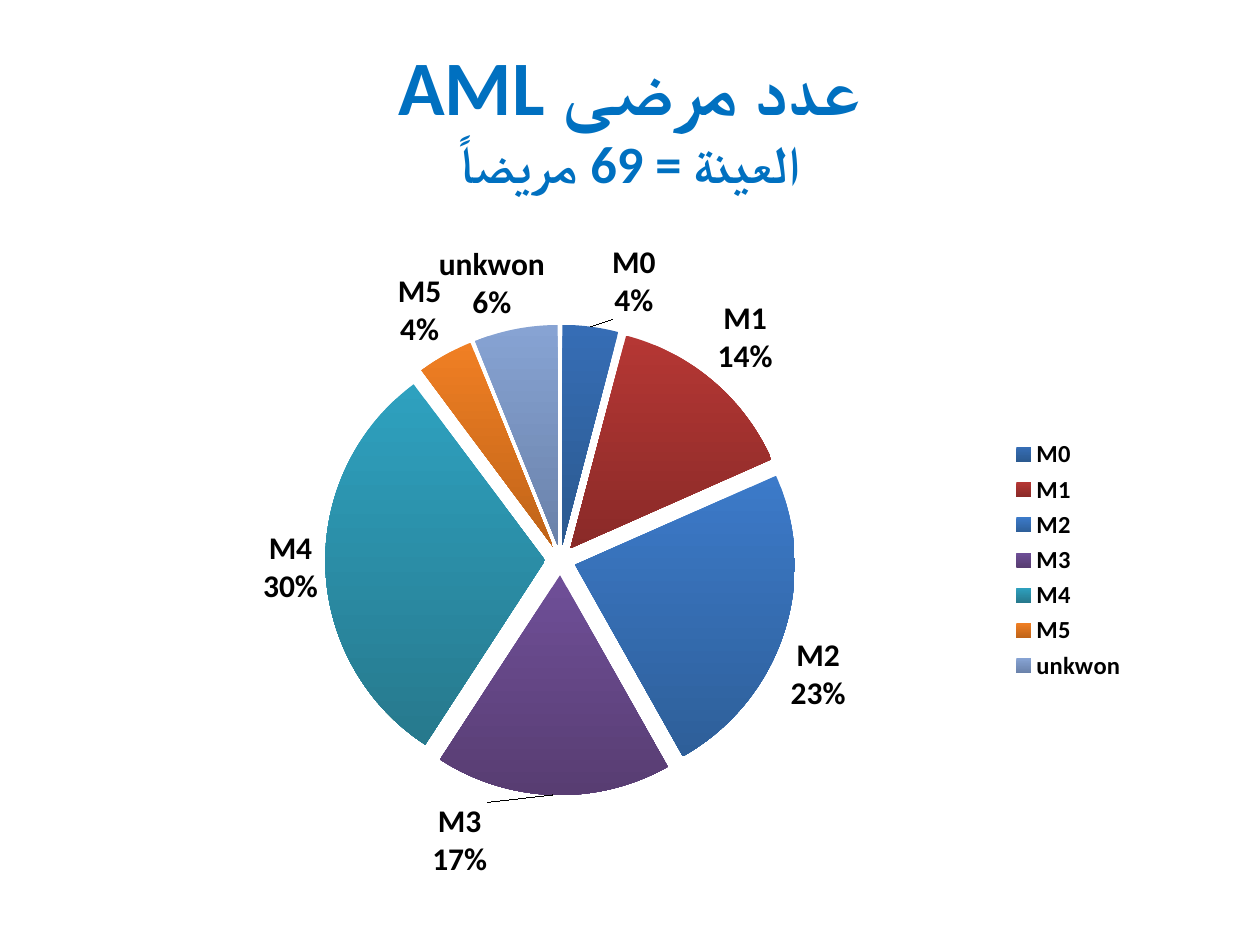
import pptx
import pptx.chart.data
import pptx.dml.color
import pptx.enum.chart
import pptx.enum.text
import pptx.oxml
import pptx.oxml.ns
import pptx.util
from dataclasses import dataclass

PX = 914400 / 126


@dataclass(frozen=True)
class Theme:
    font: str = "Calibri"
    title: str = "0070C0"
    text: str = "000000"
    title_size: int = 44
    subtitle_size: int = 30
    label_size: int = 18
    legend_size: int = 14


THEME = Theme()

TITLE_LINES = ("عدد مرضى AML", "العينة = 69 مريضاً")

# category, percent, top colour, bottom colour
SLICES = (
    ("M0", 4, "366DB5", "2B5A90"),
    ("M1", 14, "B53734", "8A2A28"),
    ("M2", 23, "3C7AC9", "2E5F99"),
    ("M3", 17, "6F4F98", "583D72"),
    ("M4", 30, "2EA1BF", "27798D"),
    ("M5", 4, "F07F24", "C06418"),
    ("unkwon", 6, "87A3D3", "6A82AA"),
)
# label shifts as fractions of the chart size
LABEL_SHIFTS = {0: (0.02, 0), 3: (-0.09, 0), 6: (0.03, 0)}
# the percentages add up to 98, so this share would be rounded up
FIXED_LABEL = 4
EXPLOSION = 7
PLOT_AREA = (0.21, 0.15, 0.46, 0.7)


def px(n):
    return pptx.util.Emu(round(n * PX))


def rgb(value):
    return pptx.dml.color.RGBColor.from_string(value)


def set_font(font, size, color):
    font.name = THEME.font
    font.size = pptx.util.Pt(size)
    font.bold = True
    font.color.rgb = rgb(color)


def set_arabic_font(r):
    """Name the font of complex scripts, which font.name leaves alone."""
    cs = pptx.oxml.parse_xml(
        f'<a:cs {pptx.oxml.ns.nsdecls("a")} typeface="{THEME.font}"/>')
    r._r.get_or_add_rPr().append(cs)


def chart_xml(tag, content="", **attrs):
    attributes = "".join(f' {k}="{v}"' for k, v in attrs.items())
    return pptx.oxml.parse_xml(
        f'<c:{tag} {pptx.oxml.ns.nsdecls("c")}{attributes}>{content}</c:{tag}>')


def manual_layout(**values):
    items = "".join(f'<c:{k} val="{v}"/>' for k, v in values.items())
    return chart_xml("layout", f"<c:manualLayout>{items}</c:manualLayout>")


def add_title(s):
    title = s.shapes.title
    title.left, title.top, title.width, title.height = map(px, (63, 38, 1134, 157))
    tf = title.text_frame
    tf.auto_size = pptx.enum.text.MSO_AUTO_SIZE.NONE
    tf.vertical_anchor = pptx.enum.text.MSO_ANCHOR.MIDDLE
    p = tf.paragraphs[0]
    p.text = "\v".join(TITLE_LINES)
    p.alignment = pptx.enum.text.PP_ALIGN.CENTER
    p._p.get_or_add_pPr().set("rtl", "1")
    for r, size in zip(p.runs, (THEME.title_size, THEME.subtitle_size)):
        set_font(r.font, size, THEME.title)
        set_arabic_font(r)


def fill_slices(series):
    for i, (_, _, top, bottom) in enumerate(SLICES):
        fill = series.points[i].format.fill
        fill.gradient()
        fill.gradient_angle = 270
        for stop, color in zip(fill.gradient_stops, (top, bottom)):
            stop.color.rgb = rgb(color)


def show_category_and_percent(labels):
    """Set the switches of a label element, on two lines."""
    for tag, value in (("showVal", 0), ("showCatName", 1), ("showPercent", 1)):
        labels.find(pptx.oxml.ns.qn(f"c:{tag}")).set("val", str(value))
    last = labels.find(pptx.oxml.ns.qn("c:showBubbleSize"))
    last.addnext(chart_xml("separator", "\n"))


def label_slices(series):
    outside = pptx.enum.chart.XL_LABEL_POSITION.OUTSIDE_END
    labels = series.data_labels
    set_font(labels.font, THEME.label_size, THEME.text)
    labels.position = outside
    show_category_and_percent(labels._element)

    for i in LABEL_SHIFTS:
        label = series.points[i].data_label
        set_font(label.font, THEME.label_size, THEME.text)
        label.position = outside

    name, percent = SLICES[FIXED_LABEL][:2]
    fixed = series.points[FIXED_LABEL].data_label
    fixed.text_frame.text = f"{name}\n{percent}%"
    for p in fixed.text_frame.paragraphs:
        set_font(p.runs[0].font, THEME.label_size, THEME.text)
    fixed.position = outside

    for label in labels._element.findall(pptx.oxml.ns.qn("c:dLbl")):
        show_category_and_percent(label)
        idx = label.find(pptx.oxml.ns.qn("c:idx"))
        shift = LABEL_SHIFTS.get(int(idx.get("val")))
        if shift:
            idx.addnext(manual_layout(x=shift[0], y=shift[1]))


def place_plot(chart):
    area = chart._chartSpace.chart.plotArea
    for old in area.findall(pptx.oxml.ns.qn("c:layout")):
        area.remove(old)
    x, y, w, h = PLOT_AREA
    area.insert(0, manual_layout(layoutTarget="inner", xMode="edge", yMode="edge",
                                 x=x, y=y, w=w, h=h))


def add_pie(s):
    data = pptx.chart.data.CategoryChartData()
    data.categories = [name for name, *_ in SLICES]
    data.add_series("Series 1", [percent for _, percent, *_ in SLICES])
    chart = s.shapes.add_chart(pptx.enum.chart.XL_CHART_TYPE.PIE,
                               *map(px, (106, 224, 1033, 672)), data).chart
    chart.has_title = False
    set_font(chart.font, THEME.legend_size, THEME.text)
    chart.has_legend = True
    chart.legend.position = pptx.enum.chart.XL_LEGEND_POSITION.RIGHT
    chart.legend.include_in_layout = False
    set_font(chart.legend.font, THEME.legend_size, THEME.text)

    plot = chart.plots[0]
    plot.vary_by_categories = True
    series = plot.series[0]
    fill_slices(series)
    first_point = series._element.find(pptx.oxml.ns.qn("c:dPt"))
    first_point.addprevious(chart_xml("explosion", val=EXPLOSION))
    label_slices(series)
    place_plot(chart)


def main():
    prs = pptx.Presentation()
    prs.slide_width, prs.slide_height = px(1260), px(945)
    s = prs.slides.add_slide(prs.slide_layouts.get_by_name("Title Only"))
    add_title(s)
    add_pie(s)
    prs.save("out.pptx")


if __name__ == "__main__":
    main()
